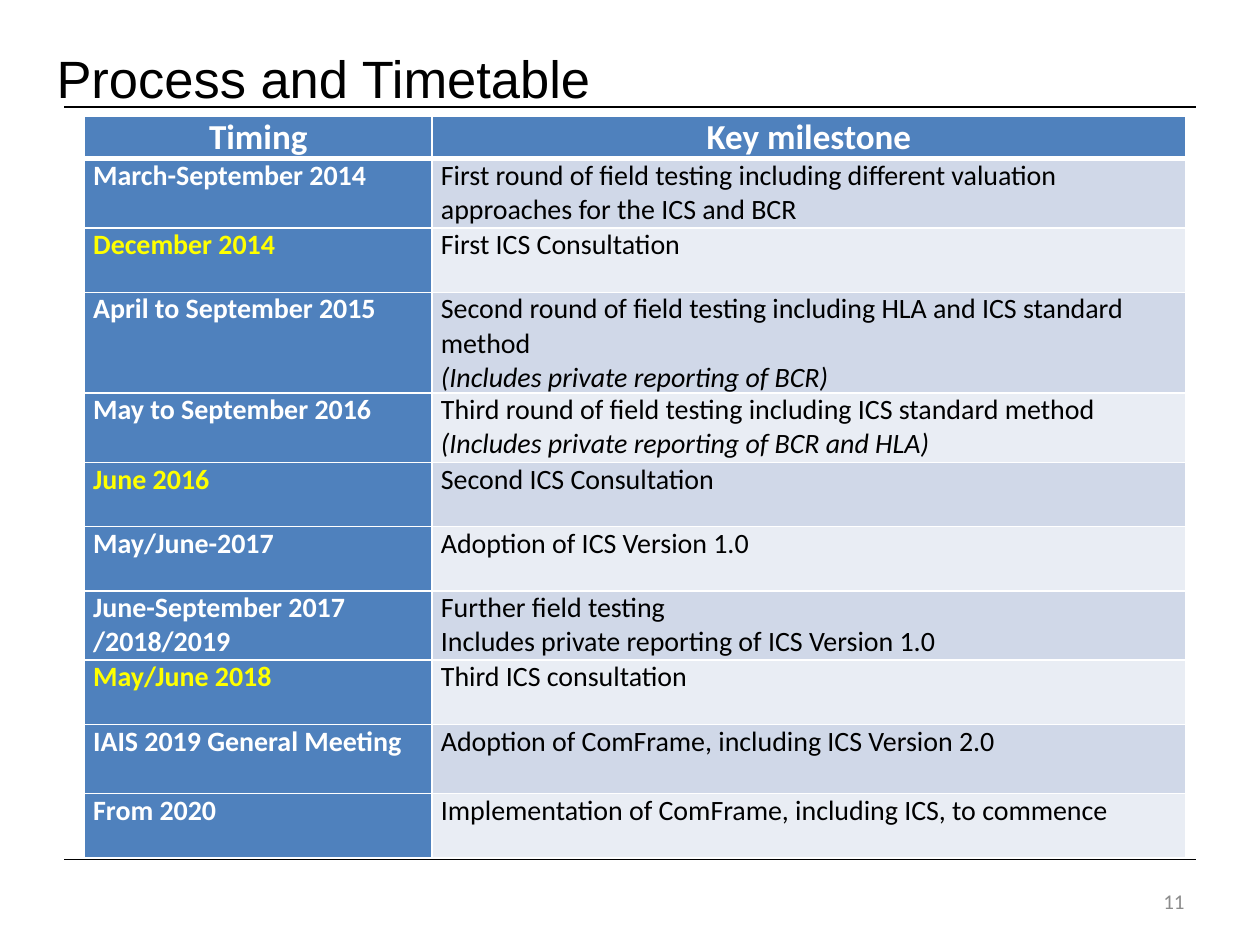
"""Build the process and timetable slide."""
from dataclasses import dataclass

from lxml.etree import SubElement
from pptx import Presentation
from pptx.dml.color import RGBColor
from pptx.enum.shapes import MSO_CONNECTOR
from pptx.enum.text import MSO_ANCHOR, PP_ALIGN
from pptx.oxml.ns import qn
from pptx.slide import Slide
from pptx.table import _Cell
from pptx.text.text import _Paragraph
from pptx.util import Inches, Pt

BLACK = RGBColor(0x00, 0x00, 0x00)
WHITE = RGBColor(0xFF, 0xFF, 0xFF)
YELLOW = RGBColor(0xFF, 0xFF, 0x00)
BLUE = RGBColor(0x4F, 0x81, 0xBD)
BANDS = (RGBColor(0xD0, 0xD8, 0xE8), RGBColor(0xE9, 0xED, 0xF4))
GRAY = RGBColor(0x8C, 0x8C, 0x8C)

HEADINGS = ("Timing", "Key milestone")
HEADING_HEIGHT = 0.34
COLUMN_WIDTHS = (2.76, 5.98)


@dataclass(frozen=True)
class TextStyle:
    size: int
    color: RGBColor
    font: str = "Calibri"
    bold: bool = False
    italic: bool = False


@dataclass(frozen=True)
class Milestone:
    timing: str
    text: str
    height: float
    detail: str = ""
    detail_italic: bool = False
    consultation: bool = False


MILESTONES = (
    Milestone("March-September 2014",
              "First round of field testing including different valuation "
              "approaches for the ICS and BCR", 0.55),
    Milestone("December 2014", "First ICS Consultation", 0.51, consultation=True),
    Milestone("April to September 2015",
              "Second round of field testing including HLA and ICS standard method",
              0.79, "(Includes private reporting of BCR)", True),
    Milestone("May to September 2016",
              "Third round of field testing including ICS standard method",
              0.55, "(Includes private reporting of BCR and HLA)", True),
    Milestone("June 2016", "Second ICS Consultation", 0.51, consultation=True),
    Milestone("May/June-2017", "Adoption of ICS Version 1.0", 0.51),
    Milestone("June-September 2017 /2018/2019", "Further field testing", 0.55,
              "Includes private reporting of ICS Version 1.0"),
    Milestone("May/June 2018", "Third ICS consultation", 0.51, consultation=True),
    Milestone("IAIS 2019 General Meeting",
              "Adoption of ComFrame, including ICS Version 2.0", 0.55),
    Milestone("From 2020",
              "Implementation of ComFrame, including ICS, to commence", 0.51),
)


def add_run(paragraph: _Paragraph, text: str, style: TextStyle) -> None:
    run = paragraph.add_run()
    run.text = text
    run.font.name = style.font
    run.font.size = Pt(style.size)
    run.font.bold = style.bold
    run.font.italic = style.italic
    run.font.color.rgb = style.color


def add_rule(slide: Slide, y: float) -> None:
    rule = slide.shapes.add_connector(
        MSO_CONNECTOR.STRAIGHT, Inches(0.51), Inches(y), Inches(9.49), Inches(y))
    rule.line.color.rgb = BLACK
    rule.line.width = Pt(0.75)
    SubElement(rule._element.spPr, qn("a:effectLst"))


def add_label(slide: Slide, text: str, box: tuple[float, float, float, float],
              style: TextStyle, align: PP_ALIGN) -> None:
    frame = slide.shapes.add_textbox(*map(Inches, box)).text_frame
    frame.word_wrap = True
    frame.vertical_anchor = MSO_ANCHOR.MIDDLE
    frame.paragraphs[0].alignment = align
    add_run(frame.paragraphs[0], text, style)


def format_cell(cell: _Cell, fill: RGBColor, bottom_width: int = 1,
                top_width: int = 1) -> None:
    cell.margin_left = cell.margin_right = Inches(0.07)
    cell.margin_top = cell.margin_bottom = 0
    properties = cell._tc.get_or_add_tcPr()
    widths = {"lnL": 1, "lnR": 1, "lnT": top_width, "lnB": bottom_width}
    for side, width in widths.items():
        border = SubElement(properties, qn(f"a:{side}"), w=str(Pt(width)))
        solid = SubElement(border, qn("a:solidFill"))
        SubElement(solid, qn("a:srgbClr"), val=str(WHITE))
    cell.fill.solid()
    cell.fill.fore_color.rgb = fill


def add_timetable(slide: Slide) -> None:
    heights = (HEADING_HEIGHT, *(milestone.height for milestone in MILESTONES))
    table = slide.shapes.add_table(
        len(heights), len(COLUMN_WIDTHS), Inches(0.67), Inches(0.92),
        Inches(sum(COLUMN_WIDTHS)), Inches(sum(heights))).table
    for column, width in zip(table.columns, COLUMN_WIDTHS):
        column.width = Inches(width)
    for row, height in zip(table.rows, heights):
        row.height = Inches(height)

    for column, heading in enumerate(HEADINGS):
        cell = table.cell(0, column)
        format_cell(cell, BLUE, bottom_width=3)
        paragraph = cell.text_frame.paragraphs[0]
        paragraph.alignment = PP_ALIGN.CENTER
        add_run(paragraph, heading, TextStyle(20, WHITE, bold=True))

    for index, milestone in enumerate(MILESTONES):
        timing, description = table.rows[index + 1].cells
        top_width = 3 if index == 0 else 1
        format_cell(timing, BLUE, top_width=top_width)
        format_cell(description, BANDS[index % 2], top_width=top_width)
        timing_color = YELLOW if milestone.consultation else WHITE
        add_run(timing.text_frame.paragraphs[0], milestone.timing,
                TextStyle(16, timing_color, bold=True))
        add_run(description.text_frame.paragraphs[0], milestone.text,
                TextStyle(16, BLACK))
        if milestone.detail:
            add_run(description.text_frame.add_paragraph(), milestone.detail,
                    TextStyle(16, BLACK, italic=milestone.detail_italic))


def main() -> None:
    presentation = Presentation()
    presentation.slide_width = Inches(10)
    presentation.slide_height = Inches(7.5)
    slide = presentation.slides.add_slide(presentation.slide_layouts[6])
    for y in (0.85, 6.82):
        add_rule(slide, y)
    add_label(slide, "Process and Timetable", (0.35, 0.3, 9.01, 0.63),
              TextStyle(30, BLACK, "Arial"), PP_ALIGN.LEFT)
    add_timetable(slide)
    add_label(slide, "11", (7.17, 6.95, 2.33, 0.4),
              TextStyle(12, GRAY), PP_ALIGN.RIGHT)
    presentation.save("out.pptx")


if __name__ == "__main__":
    main()
